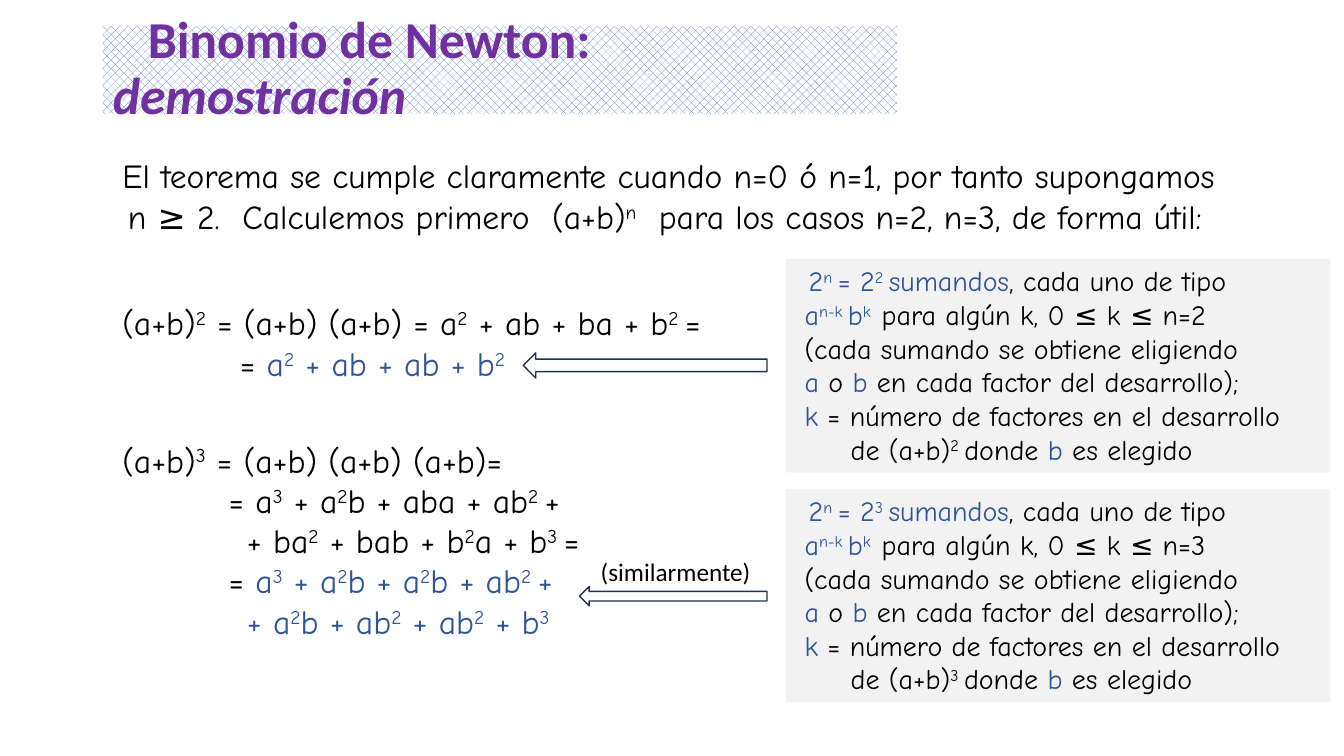
from pptx import Presentation
from pptx.dml.color import RGBColor
from pptx.enum.dml import MSO_PATTERN
from pptx.enum.shapes import MSO_SHAPE
from pptx.enum.text import MSO_ANCHOR, PP_ALIGN
from pptx.util import Pt

RECT, LEFT_ARROW = MSO_SHAPE.RECTANGLE, MSO_SHAPE.LEFT_ARROW
WEAVE = MSO_PATTERN.WEAVE
TOP, MIDDLE = MSO_ANCHOR.TOP, MSO_ANCHOR.MIDDLE
LEFT = PP_ALIGN.LEFT

BLACK, BLUE, PURPLE = "000000", "2F5597", "7030A0"
HAND, SANS = "Comic Neue", "Calibri"
MARGIN = 53.3
NOTE_LEFT, NOTE_W, NOTE_H = 561.6, 388.8, 152.6

INTRO = [
    (27, "El teorema se cumple claramente cuando n=0 ó n=1, por tanto supongamos"),
    (31, "n ≥ 2.  Calculemos primero  (a+b)^n^  para los casos n=2, n=3, de forma útil:"),
]
SQUARE = [
    (27, "(a+b)^2^ = (a+b) (a+b) = a^2^ + ab + ba + b^2 ^="),
    (111, "= ~a^2^ + ab + ab + b^2^~"),
]
CUBE = [
    (27, "(a+b)^3^ = (a+b) (a+b) (a+b)="),
    (103, "= a^3^ + a^2^b + aba + ab^2 ^+"),
    (116, "+ ba^2^ + bab + b^2^a + b^3 ^="),
    (103, "= ~a^3^ + a^2^b + a^2^b + ab^2 ^+~"),
    (116, "~+ a^2^b + ab^2^ + ab^2^ + b^3^~"),
]


def rgb(hex_color):
    return RGBColor.from_string(hex_color)


def add_run(p, text, size=24, font=HAND, color=BLACK, bold=False, italic=False, sup=False):
    r = p.add_run()
    r.text = text
    f = r.font
    f.size, f.name, f.bold, f.italic = Pt(size), font, bold, italic
    f.color.rgb = rgb(color)
    if sup:
        r._r.get_or_add_rPr().set("baseline", "30000")


def indent(p, points):
    p.alignment = LEFT
    p._p.get_or_add_pPr().set("indent", str(Pt(points)))


def write_lines(tf, lines, **fmt):
    """Write (indent, text) lines; ~ toggles blue and ^ toggles superscript."""
    tf.word_wrap = True
    tf.vertical_anchor = TOP
    for n, (start, text) in enumerate(lines):
        p = tf.add_paragraph() if n else tf.paragraphs[0]
        indent(p, start)
        for i, part in enumerate(text.split("~")):
            for j, bit in enumerate(part.split("^")):
                if bit:
                    add_run(p, bit, color=BLUE if i % 2 else BLACK, sup=j % 2 == 1, **fmt)


def add_text(s, x, y, w, h, lines, **fmt):
    box = s.shapes.add_textbox(Pt(x), Pt(y), Pt(w), Pt(h))
    write_lines(box.text_frame, lines, **fmt)


def add_title(s, x, y, w, h):
    sp = s.shapes.title
    sp.left, sp.top, sp.width, sp.height = Pt(x), Pt(y), Pt(w), Pt(h)
    sp.fill.patterned()
    sp.fill.pattern = WEAVE
    sp.fill.fore_color.rgb = rgb("4472C4")
    sp.fill.back_color.rgb = rgb("FFFFFF")
    tf = sp.text_frame
    tf.word_wrap = True
    tf.vertical_anchor = MIDDLE
    p = tf.paragraphs[0]
    indent(p, 25)
    p.line_spacing = 0.9
    fmt = dict(size=37, font=SANS, color=PURPLE, bold=True)
    add_run(p, "Binomio de Newton: ", **fmt)
    p.add_line_break()
    add_run(p, "demostración", italic=True, **fmt)


def add_arrow(s, x, y, w, h):
    sp = s.shapes.add_shape(LEFT_ARROW, Pt(x), Pt(y), Pt(w), Pt(h))
    sp.shadow.inherit = False
    sp.fill.background()
    sp.line.color.rgb = rgb("1E3256")
    sp.line.width = Pt(1)


def add_note(s, x, y, w, h, n):
    """Grey panel explaining the terms of (a+b) to the power n."""
    sp = s.shapes.add_shape(RECT, Pt(x), Pt(y), Pt(w), Pt(h))
    sp.shadow.inherit = False
    sp.fill.solid()
    sp.fill.fore_color.rgb = rgb("F2F2F2")
    sp.line.fill.background()
    write_lines(sp.text_frame, [
        (9, f"~2^n ^= 2^{n} ^sumandos~, cada uno de tipo"),
        (6, f"~a^n-k ^b^k  ^~para algún k, 0 ≤ k ≤ n={n}"),
        (6, "(cada sumando se obtiene eligiendo"),
        (6, "~a~ o ~b~ en cada factor del desarrollo);"),
        (6, "~k~ = número de factores en el desarrollo"),
        (39, f"de (a+b)^{n} ^donde ~b~ es elegido"),
    ], size=20)


def main():
    prs = Presentation()
    prs.slide_width, prs.slide_height = Pt(960), Pt(540)
    s = prs.slides.add_slide(prs.slide_layouts[5])
    add_title(s, 73.4, 18.7, 567.4, 62.6)
    add_text(s, MARGIN, 107.3, 869, 65.5, INTRO)
    add_text(s, MARGIN, 212.4, 472, 65.5, SQUARE)
    add_text(s, MARGIN, 310.3, 373, 152.6, CUBE)
    add_arrow(s, 373.7, 252, 174.2, 18)
    add_arrow(s, 414, 419, 133.9, 13.7)
    add_text(s, 414, 393.8, 139.7, 28.8, [(8, "(similarmente)")], size=18, font=SANS)
    for n, y in ((2, 185), (3, 349.2)):
        add_note(s, NOTE_LEFT, y, NOTE_W, NOTE_H, n)
    prs.save("out.pptx")


if __name__ == "__main__":
    main()
